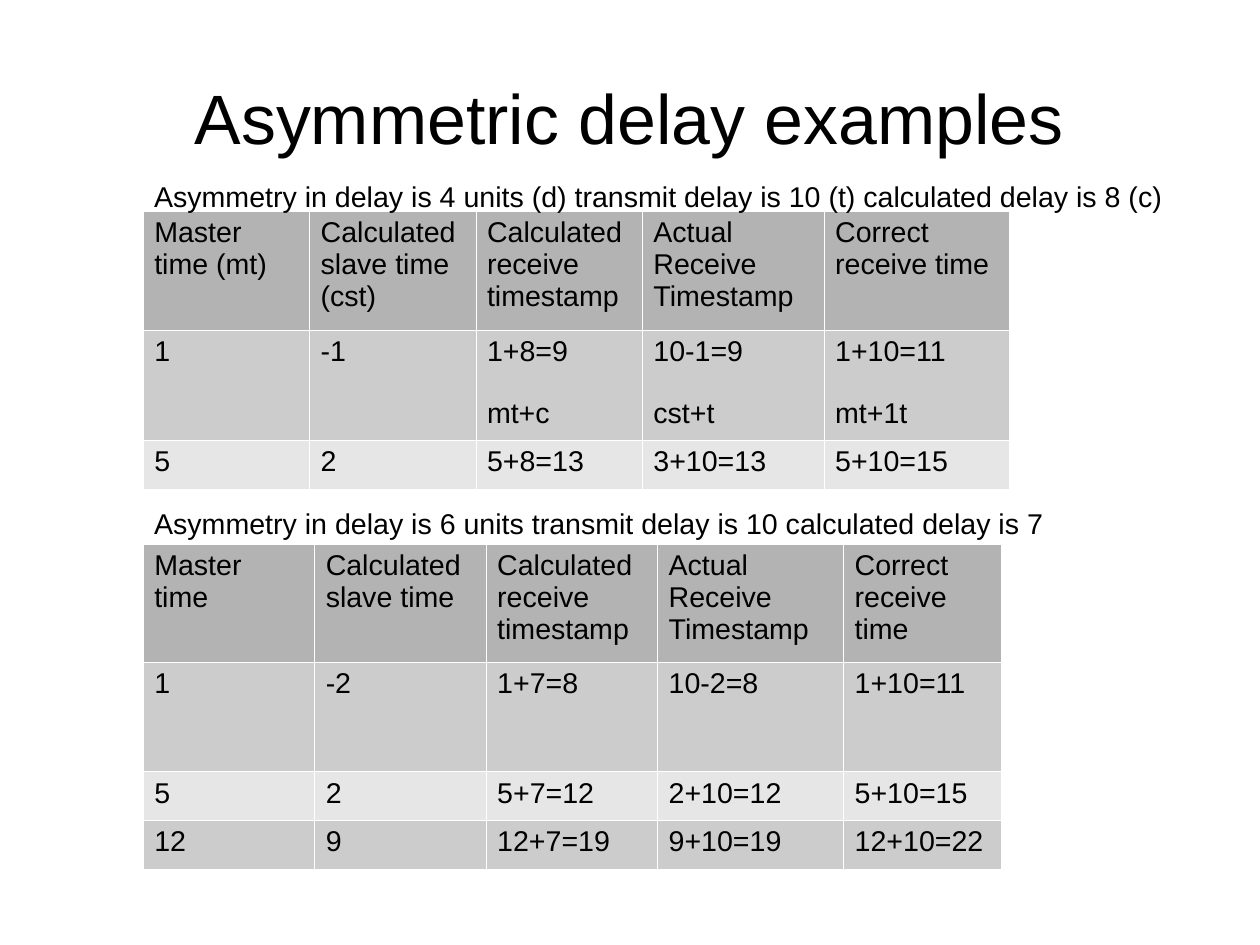
from lxml.etree import SubElement
from pptx import Presentation
from pptx.dml.color import RGBColor
from pptx.enum.text import MSO_ANCHOR, PP_ALIGN
from pptx.oxml.ns import qn
from pptx.util import Pt

TITLE = "Asymmetric delay examples"
LEFT = 90
LINE_GAP = 19
HEADER, DARK, LIGHT = "B3B3B3", "CCCCCC", "E6E6E6"
EXAMPLES = [
    {
        "caption": "Asymmetry in delay is 4 units (d) transmit delay is 10 (t) calculated delay is 8 (c)",
        "caption_box": (109.4, 654, 27.4),
        "top": 133,
        "widths": [104.8, 104.8, 104.8, 114.5, 116.5],
        "heights": [74.9, 69.1, 30.7],
        "rows": [
            ["Master time (mt)", "Calculated slave time\n(cst)", "Calculated receive timestamp",
             "Actual Receive\nTimestamp", "Correct receive time"],
            ["1", "-1", "1+8=9\nmt+c", "10-1=9\ncst+t", "1+10=11\nmt+1t"],
            ["5", "2", "5+8=13", "3+10=13", "5+10=15"],
        ],
    },
    {
        "caption": "Asymmetry in delay is 6 units transmit delay is 10 calculated delay is 7",
        "caption_box": (315, 578, 27.4),
        "top": 342.6,
        "widths": [108, 108, 108, 117.2, 99.2],
        "heights": [74.3, 69.1, 30.6, 30.6],
        "rows": [
            ["Master time", "Calculated slave time", "Calculated receive timestamp",
             "Actual Receive\nTimestamp", "Correct receive time"],
            ["1", "-2", "1+7=8", "10-2=8", "1+10=11"],
            ["5", "2", "5+7=12", "2+10=12", "5+10=15"],
            ["12", "9", "12+7=19", "9+10=19", "12+10=22"],
        ],
    },
]


def color(hex_code):
    return RGBColor.from_string(hex_code)


def write(tf, text, size):
    tf.text = text
    tf.word_wrap = True
    for p in tf.paragraphs:
        for r in p.runs:
            r.font.name = "Arial"
            r.font.size = Pt(size)
            r.font.color.rgb = color("000000")


def add_text(s, text, size, left, top, width, height):
    sp = s.shapes.add_textbox(Pt(left), Pt(top), Pt(width), Pt(height))
    write(sp.text_frame, text, size)
    return sp.text_frame


def add_borders(cell):
    tc_pr = cell._tc.get_or_add_tcPr()
    for side in ("a:lnL", "a:lnR", "a:lnT", "a:lnB"):
        ln = SubElement(tc_pr, qn(side), w=str(Pt(0.06)))
        fill = SubElement(ln, qn("a:solidFill"))
        SubElement(fill, qn("a:srgbClr"), val="FFFFFF")


def row_fill(i):
    if i == 0:
        return HEADER
    return DARK if i % 2 else LIGHT


def add_example_table(s, rows, widths, heights, top):
    table = s.shapes.add_table(len(rows), len(widths), Pt(LEFT), Pt(top),
                               Pt(sum(widths)), Pt(sum(heights))).table
    table.first_row = False
    table.horz_banding = False
    for column, width in zip(table.columns, widths):
        column.width = Pt(width)
    for i, (row, height) in enumerate(zip(rows, heights)):
        table.rows[i].height = Pt(height)
        for j, text in enumerate(row):
            cell = table.cell(i, j)
            write(cell.text_frame, text, 18)
            add_borders(cell)
            cell.fill.solid()
            cell.fill.fore_color.rgb = color(row_fill(i))
            if i > 0:
                for p in cell.text_frame.paragraphs[1:]:
                    p.space_before = Pt(LINE_GAP)


def main():
    prs = Presentation()
    prs.slide_width, prs.slide_height = Pt(793.7), Pt(595.28)
    s = prs.slides.add_slide(prs.slide_layouts[6])

    tf = add_text(s, TITLE, 44, 39.6, 23.8, 714.2, 99.4)
    tf.margin_left = tf.margin_right = tf.margin_top = tf.margin_bottom = 0
    tf.vertical_anchor = MSO_ANCHOR.MIDDLE
    tf.paragraphs[0].alignment = PP_ALIGN.CENTER

    for example in EXAMPLES:
        add_example_table(s, example["rows"], example["widths"], example["heights"], example["top"])
        add_text(s, example["caption"], 18, LEFT, *example["caption_box"])

    prs.save("out.pptx")


if __name__ == "__main__":
    main()
